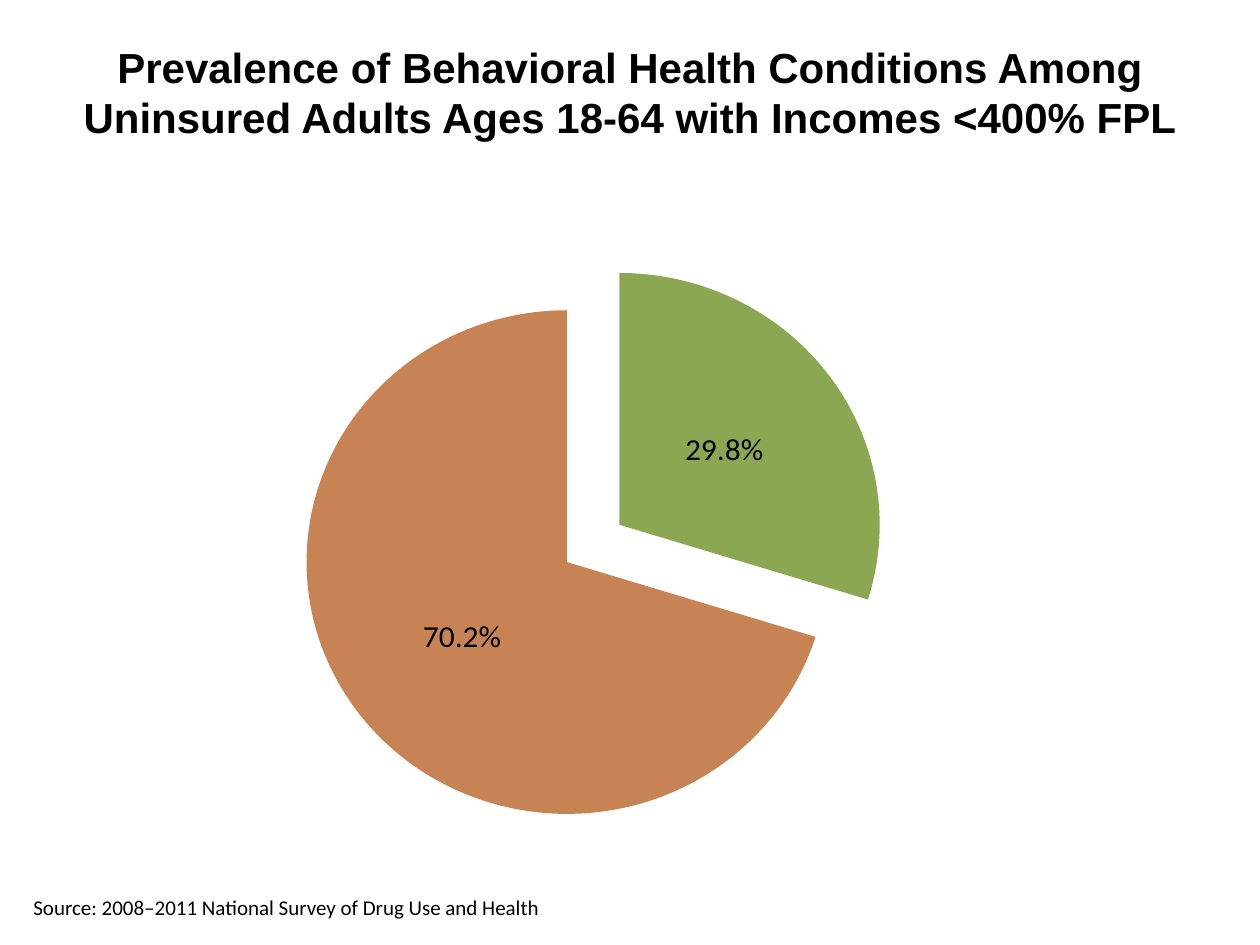
from lxml import etree
from pptx import Presentation
from pptx.chart.data import CategoryChartData
from pptx.dml.color import RGBColor
from pptx.enum.chart import XL_CHART_TYPE, XL_LABEL_POSITION
from pptx.enum.text import MSO_ANCHOR, PP_ALIGN
from pptx.oxml import parse_xml
from pptx.oxml.ns import qn
from pptx.util import Emu, Pt

PIE = XL_CHART_TYPE.PIE
LABEL_CENTER = XL_LABEL_POSITION.CENTER
MIDDLE = MSO_ANCHOR.MIDDLE
LEFT, CENTER = PP_ALIGN.LEFT, PP_ALIGN.CENTER
PX_PER_INCH = 126
COLORS = {"text": "000000", "affected": "8BA751", "unaffected": "C88354"}
PLOT_LAYOUT = {"layoutTarget": "inner", "xMode": "edge", "yMode": "edge",
               "x": 0.19, "y": 0.03, "w": 0.62, "h": 0.94}


def px(length):
    return Emu(round(length * 914400 / PX_PER_INCH))


def color(name):
    return RGBColor.from_string(COLORS[name])


class SlideBuilder:
    heading_font = "Arial"
    body_font = "Calibri"

    def __init__(self, deck):
        self.page = deck.slides.add_slide(deck.slide_layouts[5])

    def style(self, font, name, size, bold=False):
        font.name = name
        font.size = Pt(size)
        font.bold = bold
        font.color.rgb = color("text")

    def fill_text(self, box, text, name, size, align, bold=False):
        frame = box.text_frame
        frame.word_wrap = True
        frame.vertical_anchor = MIDDLE
        para = frame.paragraphs[0]
        para.alignment = align
        span = para.add_run()
        span.text = text
        self.style(span.font, name, size, bold)

    def title(self, text, left, top, width, height):
        box = self.page.shapes.title
        box.left, box.top, box.width, box.height = map(px, (left, top, width, height))
        self.fill_text(box, text, self.heading_font, 24, CENTER, True)

    def text(self, text, left, top, width, height):
        box = self.page.shapes.add_textbox(*map(px, (left, top, width, height)))
        self.fill_text(box, text, self.body_font, 12, LEFT)

    def pie(self, values, fills, exploded, left, top, width, height):
        data = CategoryChartData(number_format="0.0%")
        data.categories = [str(number + 1) for number in range(len(values))]
        data.add_series("Series 1", values)
        frame = self.page.shapes.add_chart(PIE, *map(px, (left, top, width, height)), data)
        chart = frame.chart
        chart.has_legend = False
        chart.has_title = False
        self.style(chart.font, self.body_font, 18)
        plot = chart.plots[0]
        plot.vary_by_categories = True
        series = plot.series[0]
        for index, name in enumerate(fills):
            fill = series.points[index].format.fill
            fill.solid()
            fill.fore_color.rgb = color(name)
        self.explode(series, exploded, 25)
        self.place_plot(chart)
        plot.has_data_labels = True
        labels = plot.data_labels
        labels.show_value = True
        labels.show_percentage = False
        labels.number_format = "0.0%"
        labels.number_format_is_linked = False
        labels.position = LABEL_CENTER
        self.style(labels.font, self.body_font, 18)

    def explode(self, series, index, percent):
        point = series._element.findall(qn("c:dPt"))[index]
        explosion = etree.Element(qn("c:explosion"), val=str(percent))
        point.find(qn("c:spPr")).addprevious(explosion)

    def place_plot(self, chart):
        area = chart._chartSpace.find(".//" + qn("c:plotArea"))
        for layout in area.findall(qn("c:layout")):
            area.remove(layout)
        settings = "".join(f'<c:{key} val="{value}"/>' for key, value in PLOT_LAYOUT.items())
        area.insert(0, parse_xml(
            '<c:layout xmlns:c="http://schemas.openxmlformats.org/drawingml/2006/chart">'
            f"<c:manualLayout>{settings}</c:manualLayout></c:layout>"))


def main():
    deck = Presentation()
    deck.slide_width = px(1260)
    deck.slide_height = px(945)
    slide = SlideBuilder(deck)
    slide.title("Prevalence of Behavioral Health Conditions Among "
                "Uninsured Adults Ages 18-64 with Incomes <400% FPL", 63, 21, 1134, 141)
    slide.text("Source: 2008–2011 National Survey of Drug Use and Health", 21, 882, 735, 50)
    slide.pie((0.298, 0.702), ("affected", "unaffected"), 0, 147, 273, 840, 560)
    deck.save("out.pptx")


if __name__ == "__main__":
    main()
